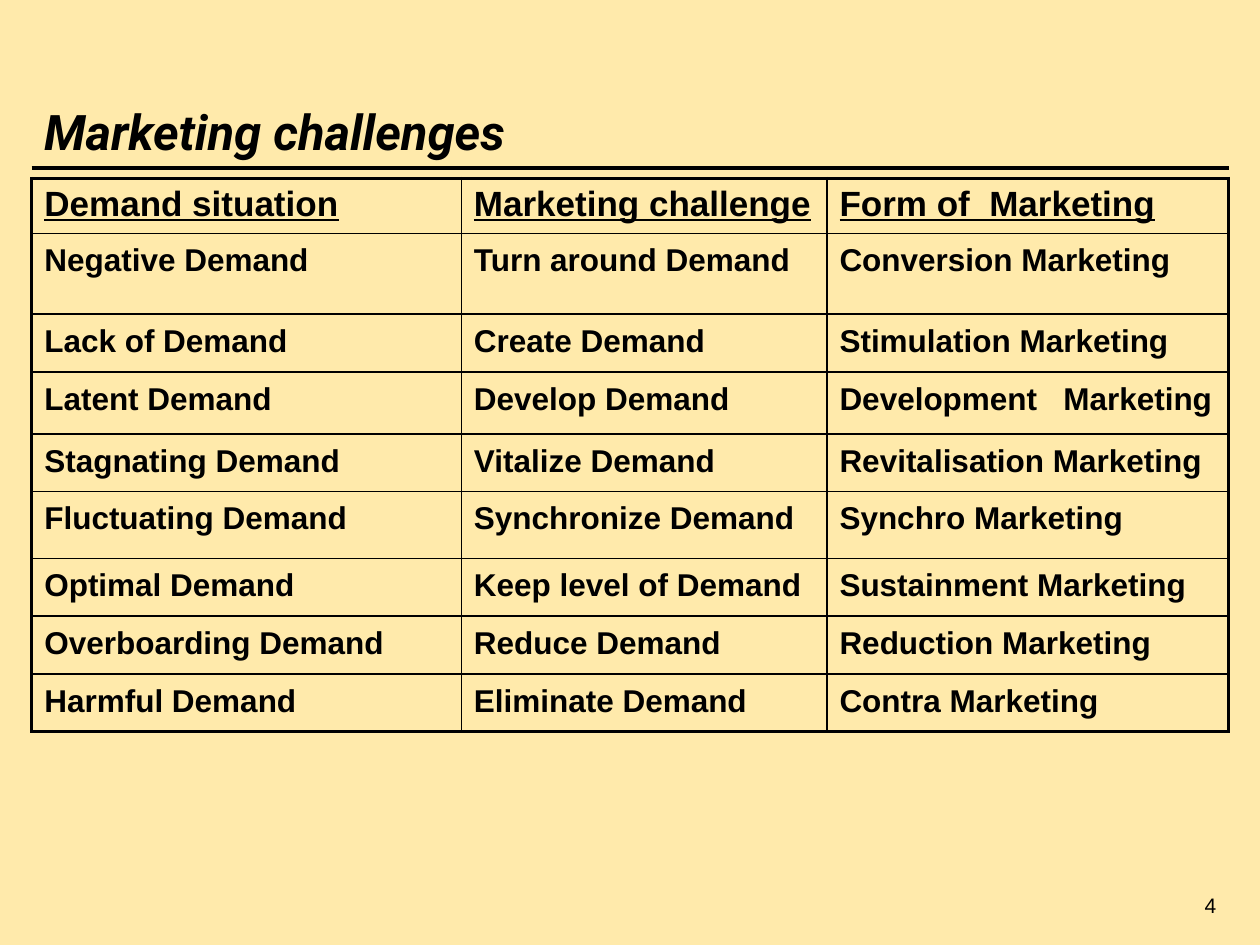
"""Build a slide with a table of marketing challenges by demand situation."""
from dataclasses import dataclass

from lxml.etree import SubElement
from pptx import Presentation
from pptx.dml.color import RGBColor
from pptx.enum.text import MSO_ANCHOR, PP_ALIGN
from pptx.oxml import parse_xml
from pptx.oxml.ns import nsdecls, qn
from pptx.slide import Slide
from pptx.util import Cm, Pt

INK = "000000"
SAND = "FFEAAB"
THICK, THIN = 2.25, 1
LEFT, WIDE = 0.64, 24.13
COLS = (8.66, 7.37, 8.1)
TALLS = (1.02, 1.63, 1.11, 1.25, 1.11, 1.35, 1.11, 1.11, 1.11)
ROWS = (
    ("Demand situation", "Marketing challenge", "Form of  Marketing"),
    ("Negative Demand", "Turn around Demand", "Conversion Marketing"),
    ("Lack of Demand", "Create Demand", "Stimulation Marketing"),
    ("Latent Demand", "Develop Demand", "Development   Marketing"),
    ("Stagnating Demand", "Vitalize Demand", "Revitalisation Marketing"),
    ("Fluctuating Demand", "Synchronize Demand", "Synchro Marketing"),
    ("Optimal Demand", "Keep level of Demand", "Sustainment Marketing"),
    ("Overboarding Demand", "Reduce Demand", "Reduction Marketing"),
    ("Harmful Demand", "Eliminate Demand", "Contra Marketing"),
)


@dataclass(frozen=True)
class Style:
    size: int
    face: str = "Arial"
    bold: bool = False
    slant: bool = False
    under: bool = False


@dataclass(frozen=True)
class Label:
    text: str
    left: float
    top: float
    width: float
    height: float
    style: Style
    align: PP_ALIGN
    anchor: MSO_ANCHOR


HEAD = Style(20, bold=True, under=True)
BODY = Style(18, bold=True)
LABELS = (
    Label("4", 19.48, 17.35, 5.29, 1.27, Style(12),
          PP_ALIGN.RIGHT, MSO_ANCHOR.BOTTOM),
    Label("Marketing challenges", LEFT, 1.9, 15.88, 1.48,
          Style(28, "Roboto", bold=True, slant=True),
          PP_ALIGN.LEFT, MSO_ANCHOR.MIDDLE),
)


def color(code: str) -> RGBColor:
    return RGBColor.from_string(code)


def write(frame, text: str, style: Style) -> None:
    frame.text = text
    font = frame.paragraphs[0].runs[0].font
    font.name, font.size = style.face, Pt(style.size)
    font.bold, font.italic = style.bold, style.slant
    font.underline = style.under
    font.color.rgb = color(INK)


def add_label(slide: Slide, item: Label) -> None:
    box = slide.shapes.add_textbox(
        Cm(item.left), Cm(item.top), Cm(item.width), Cm(item.height))
    frame = box.text_frame
    frame.word_wrap = True
    frame.vertical_anchor = item.anchor
    write(frame, item.text, item.style)
    frame.paragraphs[0].alignment = item.align


def add_rule(slide: Slide, top: float) -> None:
    rule = slide.shapes.add_connector(
        1, Cm(LEFT), Cm(top), Cm(LEFT + WIDE), Cm(top))
    rule.line.color.rgb = color(INK)
    rule.line.width = Pt(THICK)
    SubElement(rule._element.spPr, qn("a:effectLst"))


def add_edges(cell, outer: dict[str, bool]) -> None:
    props = cell._tc.get_or_add_tcPr()
    for spot, (side, edge) in enumerate(outer.items()):
        width = Pt(THICK if edge else THIN)
        props.insert(spot, parse_xml(
            f'<a:ln{side} {nsdecls("a")} w="{width}"><a:solidFill>'
            f'<a:srgbClr val="{INK}"/></a:solidFill></a:ln{side}>'))


def add_grid(slide: Slide, top: float) -> None:
    grid = slide.shapes.add_table(
        len(ROWS), len(COLS), Cm(LEFT), Cm(top),
        Cm(WIDE), Cm(sum(TALLS))).table
    grid.first_row = grid.horz_banding = False
    for col, width in zip(grid.columns, COLS):
        col.width = Cm(width)
    for row, tall in zip(grid.rows, TALLS):
        row.height = Cm(tall)
    for i, texts in enumerate(ROWS):
        for j, text in enumerate(texts):
            cell = grid.cell(i, j)
            cell.fill.background()
            write(cell.text_frame, text, BODY if i else HEAD)
            if i:
                cell.margin_top = cell.margin_bottom = Cm(0.2)
            add_edges(cell, {"L": j == 0, "R": j == len(COLS) - 1,
                             "T": i == 0, "B": i == len(ROWS) - 1})


def main() -> None:
    deck = Presentation()
    deck.slide_width, deck.slide_height = Cm(25.4), Cm(19.05)
    slide = deck.slides.add_slide(deck.slide_layouts[6])
    fill = slide.background.fill
    fill.solid()
    fill.fore_color.rgb = color(SAND)
    add_rule(slide, 3.39)
    for item in LABELS:
        add_label(slide, item)
    add_grid(slide, 3.6)
    deck.save("out.pptx")


if __name__ == "__main__":
    main()
